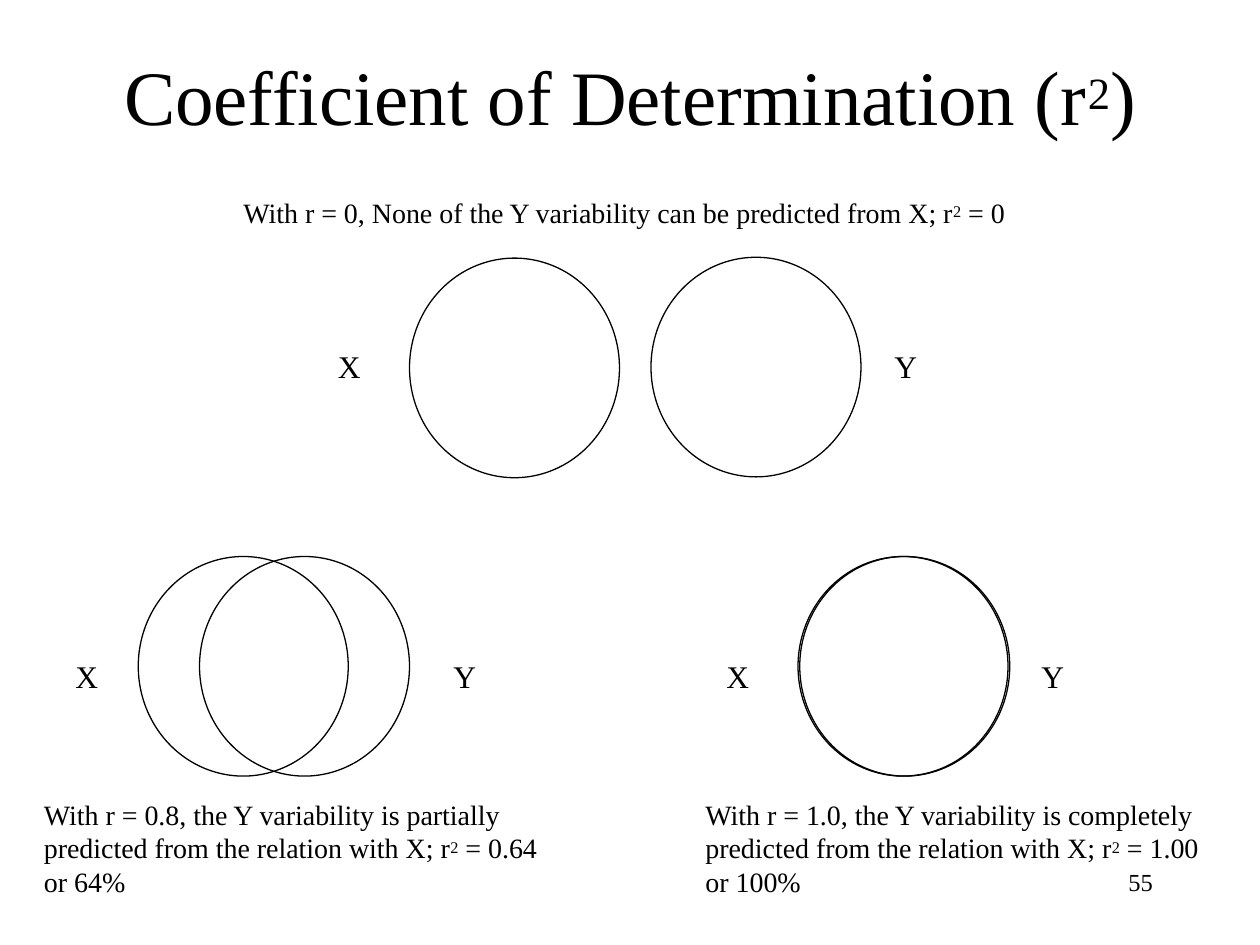
from pptx import Presentation
from pptx.dml.color import RGBColor
from pptx.enum.shapes import MSO_SHAPE
from pptx.enum.text import MSO_ANCHOR, MSO_AUTO_SIZE, PP_ALIGN
from pptx.util import Pt

BLACK = RGBColor(0, 0, 0)
FONT = "Times New Roman"
CIRCLE_W, CIRCLE_H = 120, 125.5
LABEL_W, LABEL_H = 27.4, 29


def add_run(p, text, size, superscript=False):
    r = p.add_run()
    r.text = text
    r.font.name = FONT
    r.font.size = Pt(size)
    r.font.color.rgb = BLACK
    if superscript:
        r._r.get_or_add_rPr().set("baseline", "20000")


def add_text(s, left, top, width, height, parts, size,
             align=None, anchor=MSO_ANCHOR.TOP, wrap=True, grow=True):
    sp = s.shapes.add_textbox(Pt(left), Pt(top), Pt(width), Pt(height))
    tf = sp.text_frame
    tf.word_wrap = wrap
    tf.auto_size = MSO_AUTO_SIZE.SHAPE_TO_FIT_TEXT if grow else MSO_AUTO_SIZE.NONE
    tf.vertical_anchor = anchor
    p = tf.paragraphs[0]
    p.alignment = align
    for i, text in enumerate(parts):
        add_run(p, text, size, superscript=i % 2 == 1)


def add_circle(s, left, top):
    sp = s.shapes.add_shape(MSO_SHAPE.OVAL, Pt(left), Pt(top), Pt(CIRCLE_W), Pt(CIRCLE_H))
    sp.shadow.inherit = False
    sp.fill.background()
    sp.line.color.rgb = BLACK
    sp.line.width = Pt(0.75)


def add_diagram(s, circles, x_left, y_left, label_top):
    for left, top in circles:
        add_circle(s, left, top)
    for text, left in (("X", x_left), ("Y", y_left)):
        add_text(s, left, label_top, LABEL_W, LABEL_H, [text], 18, wrap=False)


def main():
    prs = Presentation()
    prs.slide_width, prs.slide_height = Pt(720), Pt(540)
    s = prs.slides.add_slide(prs.slide_layouts[6])

    add_text(s, 54, 30, 612, 48, ["Coefficient of Determination (r", "2", ")"], 44,
             align=PP_ALIGN.CENTER, anchor=MSO_ANCHOR.MIDDLE, grow=False)

    add_diagram(s, [(79, 318), (114, 318)], 36, 252, 372)
    add_diagram(s, [(457, 318), (456, 318)], 408, 588, 372)
    add_diagram(s, [(234, 147.5), (372, 147)], 186, 504, 194.5)

    add_text(s, 18, 452, 312, 65.5,
             ["With r = 0.8, the Y variability is partially predicted from the relation with X; r",
              "2", " = 0.64 or 64%"], 16)
    add_text(s, 396, 452, 306, 65.5,
             ["With r = 1.0, the Y variability is completely predicted from the relation with X; r",
              "2", " = 1.00 or 100%"], 16)
    add_text(s, 132, 108, 474, 26.5,
             ["With r = 0, None of the Y variability can be predicted from X; r", "2", " = 0"], 16)
    add_text(s, 516, 492, 150, 36, ["55"], 14, align=PP_ALIGN.RIGHT, grow=False)

    prs.save("out.pptx")


if __name__ == "__main__":
    main()
